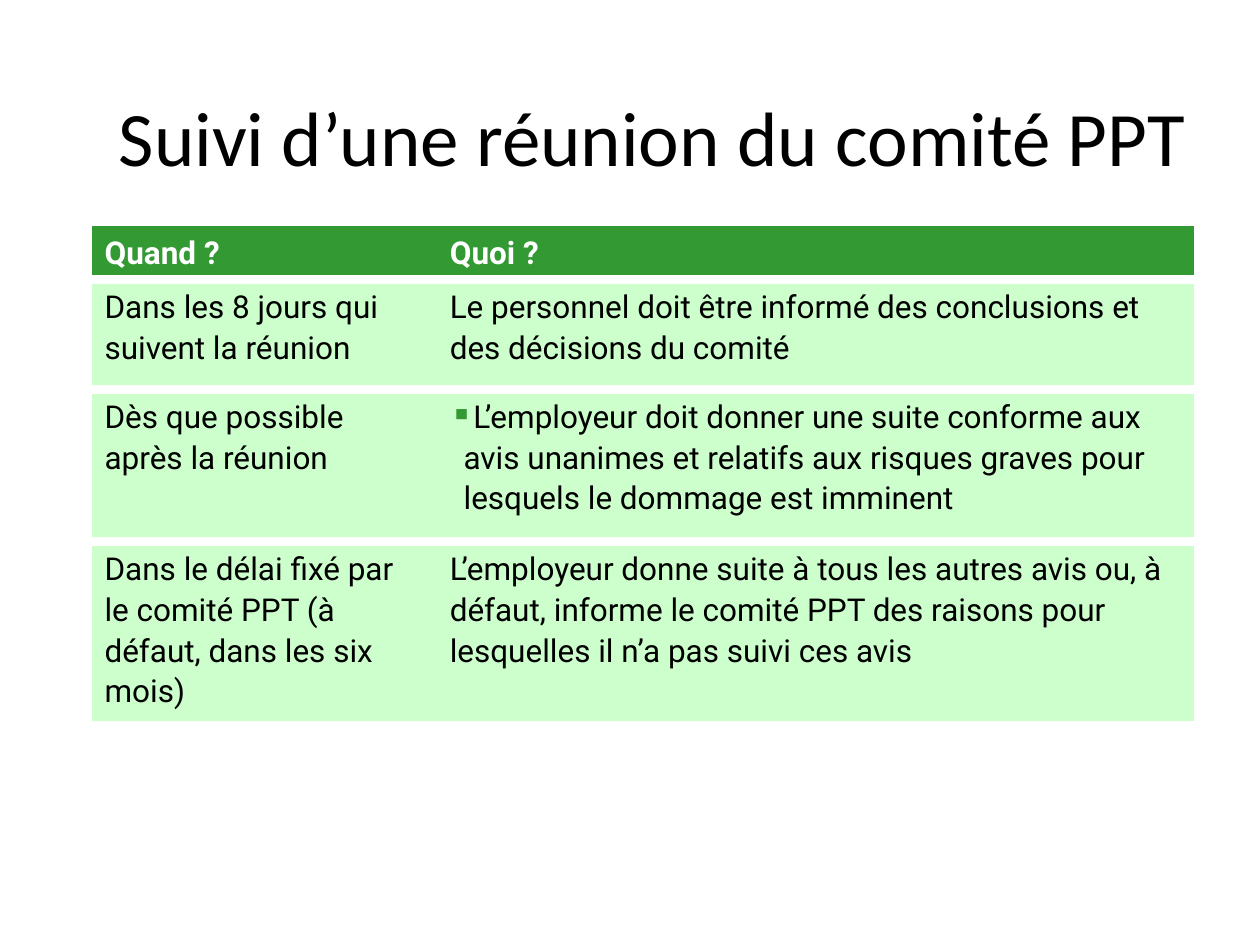
from lxml import etree
from pptx import Presentation
from pptx.dml.color import RGBColor
from pptx.enum.text import MSO_ANCHOR, PP_ALIGN
from pptx.oxml.ns import qn
from pptx.util import Inches, Pt

LEFT, CENTER = PP_ALIGN.LEFT, PP_ALIGN.CENTER
TOP, MIDDLE = MSO_ANCHOR.TOP, MSO_ANCHOR.MIDDLE
BLACK = RGBColor(0x00, 0x00, 0x00)
WHITE = RGBColor(0xFF, 0xFF, 0xFF)
GREEN = RGBColor(0x33, 0x99, 0x33)
PALE_GREEN = RGBColor(0xCC, 0xFF, 0xCC)

TITLE = "Suivi d’une réunion du comité PPT"
BULLET = "▪"
ROWS = [
    ("Quand ?", "Quoi ?"),
    ("Dans les 8 jours qui suivent la réunion",
     "Le personnel doit être informé des conclusions et des décisions du comité"),
    ("Dès que possible après la réunion",
     BULLET + "L’employeur doit donner une suite conforme aux avis unanimes et "
     "relatifs aux risques graves pour lesquels le dommage est imminent"),
    ("Dans le délai fixé par le comité PPT (à défaut, dans les six mois)",
     "L’employeur donne suite à tous les autres avis ou, à défaut, informe le "
     "comité PPT des raisons pour lesquelles il n’a pas suivi ces avis"),
]
COL_WIDTHS = [2.74, 6.01]
ROW_HEIGHTS = [0.43, 0.87, 1.21, 1.42]
RULE_WIDTH = Pt(6)
BULLET_INDENT = Inches(0.11)


def add_bullet(p):
    pPr = p._p.get_or_add_pPr()
    pPr.set("marL", str(BULLET_INDENT))
    pPr.set("indent", str(-BULLET_INDENT))
    color = etree.SubElement(pPr, qn("a:buClr"))
    etree.SubElement(color, qn("a:srgbClr"), val=str(GREEN))
    etree.SubElement(pPr, qn("a:buChar"), char=BULLET)


def write(tf, text, font="Roboto", size=18, color=BLACK, bold=False,
          align=LEFT, anchor=TOP, spacing=1.1):
    tf.word_wrap = True
    tf.vertical_anchor = anchor
    p = tf.paragraphs[0]
    p.alignment = align
    p.line_spacing = spacing
    if text.startswith(BULLET):
        add_bullet(p)
    r = p.add_run()
    r.text = text.removeprefix(BULLET)
    r.font.name = font
    r.font.size = Pt(size)
    r.font.bold = bold
    r.font.color.rgb = color


def set_borders(cell, ruled_sides):
    """White rules on the given sides, no line on the others."""
    tcPr = cell._tc.get_or_add_tcPr()
    for i, side in enumerate("LRTB"):
        ln = etree.Element(qn(f"a:ln{side}"), w=str(RULE_WIDTH))
        if side in ruled_sides:
            fill = etree.SubElement(ln, qn("a:solidFill"))
            etree.SubElement(fill, qn("a:srgbClr"), val=str(WHITE))
        else:
            etree.SubElement(ln, qn("a:noFill"))
        tcPr.insert(i, ln)


def add_follow_up_table(slide):
    table = slide.shapes.add_table(
        len(ROWS), len(COL_WIDTHS), Inches(0.73), Inches(1.79),
        Inches(sum(COL_WIDTHS)), Inches(sum(ROW_HEIGHTS))).table
    for column, width in zip(table.columns, COL_WIDTHS):
        column.width = Inches(width)
    for i, (texts, height) in enumerate(zip(ROWS, ROW_HEIGHTS)):
        header = i == 0
        sides = ("" if header else "T") + ("B" if i < len(ROWS) - 1 else "")
        table.rows[i].height = Inches(height)
        for cell, text in zip(table.rows[i].cells, texts):
            cell.fill.solid()
            cell.fill.fore_color.rgb = GREEN if header else PALE_GREEN
            write(cell.text_frame, text, bold=header,
                  color=WHITE if header else BLACK)
            set_borders(cell, sides)


def main():
    prs = Presentation()
    prs.slide_width, prs.slide_height = Inches(10), Inches(7.5)
    slide = prs.slides.add_slide(prs.slide_layouts[5])
    title = slide.shapes.title
    title.left, title.top = Inches(0.75), Inches(0.45)
    title.width, title.height = Inches(8.86), Inches(1.25)
    write(title.text_frame, TITLE, font="Calibri", size=44,
          align=CENTER, anchor=MIDDLE, spacing=1.0)
    add_follow_up_table(slide)
    prs.save("out.pptx")


if __name__ == "__main__":
    main()
